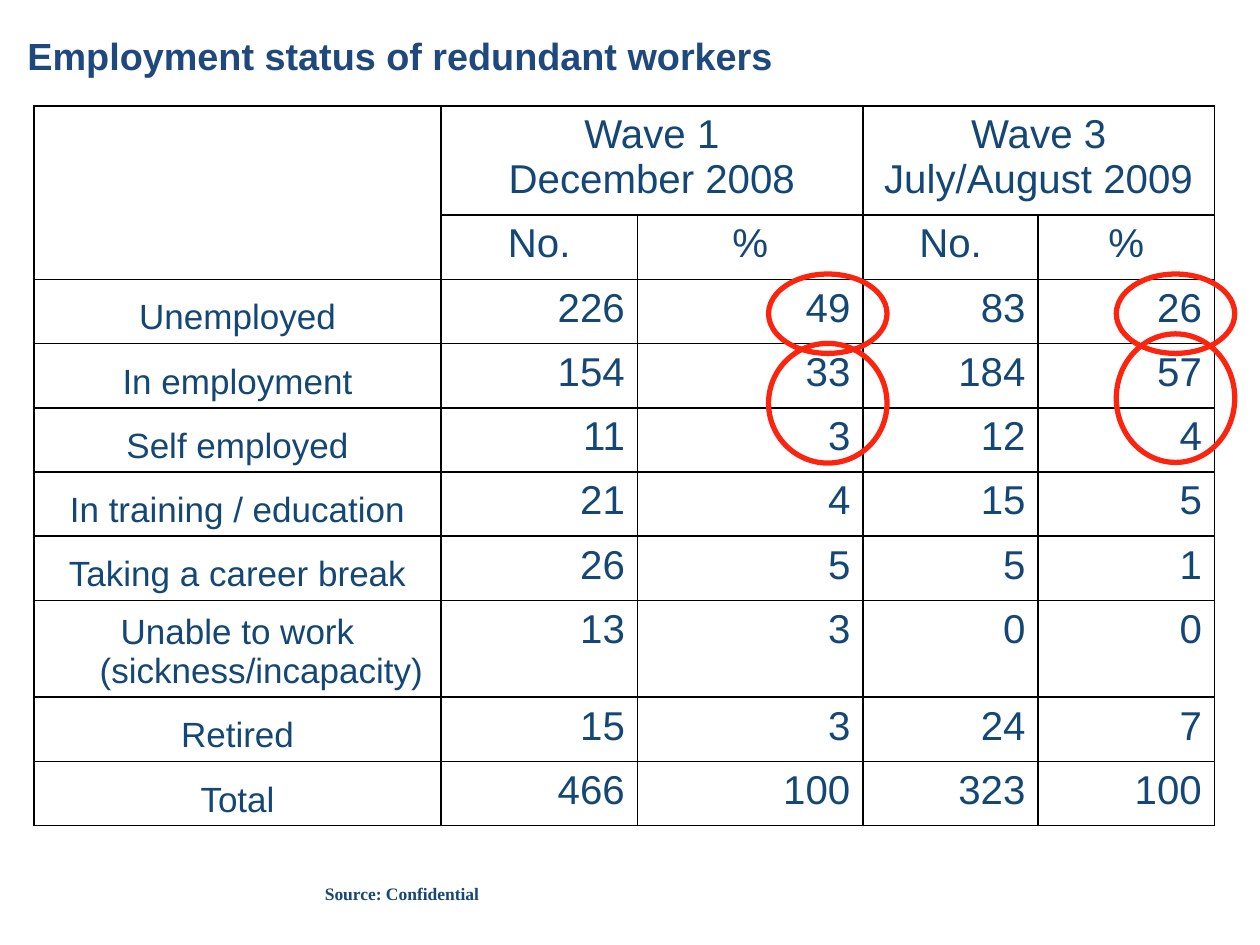
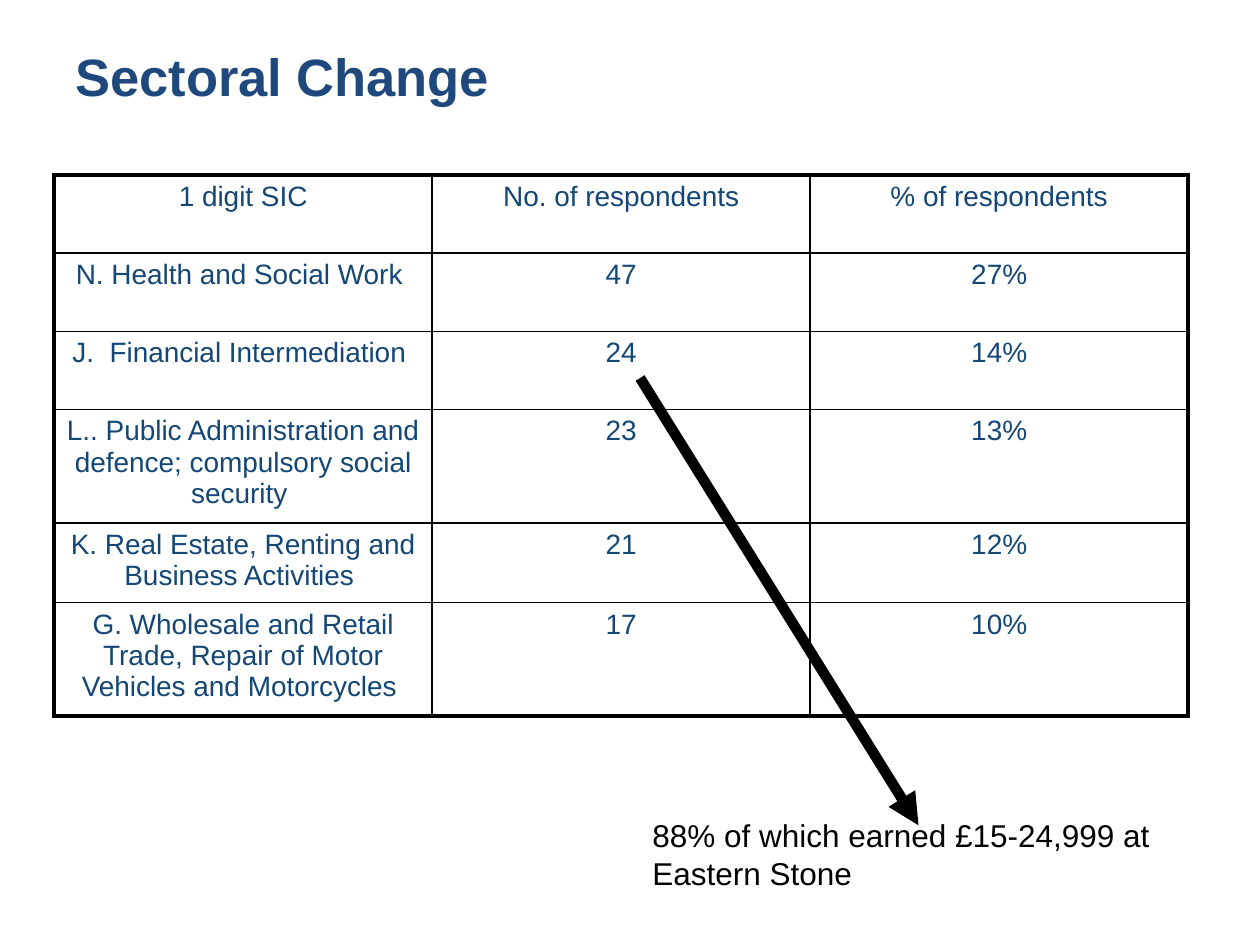
from lxml import etree
from pptx import Presentation
from pptx.dml.color import RGBColor
from pptx.enum import shapes, text
from pptx.oxml import ns
from pptx.util import Inches, Pt

NAVY, TITLE_BLUE, RED, BLACK = "144776", "1F497D", "FB250F", "000000"
LEFT, CENTER, RIGHT = text.PP_ALIGN.LEFT, text.PP_ALIGN.CENTER, text.PP_ALIGN.RIGHT
TOP, MIDDLE, BOTTOM = text.MSO_ANCHOR.TOP, text.MSO_ANCHOR.MIDDLE, text.MSO_ANCHOR.BOTTOM
THIN, THICK = 1, 2.25

STATUS_HEADERS = [
    ["", "Wave 1\nDecember 2008", "", "Wave 3\nJuly/August 2009", ""],
    ["", "No.", "%", "No.", "%"],
]
STATUS_ROWS = [
    ["Unemployed", 226, 49, 83, 26],
    ["In employment", 154, 33, 184, 57],
    ["Self employed", 11, 3, 12, 4],
    ["In training / education", 21, 4, 15, 5],
    ["Taking a career break", 26, 5, 5, 1],
    ["Unable to work (sickness/incapacity)", 13, 3, 0, 0],
    ["Retired", 15, 3, 24, 7],
    ["Total", 466, 100, 323, 100],
]
STATUS_COLUMNS = [3.23, 1.56, 1.79, 1.39, 1.4]
STATUS_HEIGHTS = [0.81] + [0.51] * 9
STATUS_MERGES = [((0, 0), (1, 0)), ((0, 1), (0, 2)), ((0, 3), (0, 4))]
HANGING = 0.38

# centre x, centre y, height of each ring around a percentage
RINGS = [(9.33, 3.16, 1.02), (9.33, 2.49, 0.63), (6.57, 2.49, 0.63), (6.57, 3.2, 0.95)]
RING_WIDTH = 0.94

SECTOR_ROWS = [
    ["1 digit SIC", "No. of respondents", "% of respondents"],
    ["N. Health and Social Work ", "47", "27%"],
    ["J.  Financial Intermediation ", "24", "14%"],
    ["L.. Public Administration and defence; compulsory social security ", "23", "13%"],
    ["K. Real Estate, Renting and Business Activities ", "21", "12%"],
    ["G. Wholesale and Retail Trade, Repair of Motor Vehicles and Motorcycles ", "17", "10%"],
]
EARNINGS_NOTE = "88% of which earned £15-24,999 at Eastern Stone"


def rgb(color):
    return RGBColor.from_string(color)


def style(frame, size, color=NAVY, font="Arial", bold=False, align=LEFT, hanging=0):
    for paragraph in frame.paragraphs:
        paragraph.alignment = align
        if hanging:
            properties = paragraph._p.get_or_add_pPr()
            properties.set("marL", str(Inches(hanging)))
            properties.set("indent", str(-Inches(hanging)))
        for run in paragraph.runs:
            run.font.name, run.font.size, run.font.bold = font, Pt(size), bold
            run.font.color.rgb = rgb(color)


def add_text(slide, words, place, size, anchor=TOP, **look):
    frame = slide.shapes.add_textbox(*map(Inches, place)).text_frame
    frame.word_wrap = True
    frame.vertical_anchor = anchor
    frame.text = words
    style(frame, size, **look)


def add_title(slide, words, place, size):
    add_text(slide, words, place, size, color=TITLE_BLUE, bold=True)


def set_borders(cell, widths):
    """Draw black cell edges; widths are points for left, right, top, bottom."""
    properties = cell._tc.get_or_add_tcPr()
    for side, width in zip("LRTB", widths):
        edge = etree.SubElement(properties, ns.qn(f"a:ln{side}"), w=str(Pt(width)))
        fill = etree.SubElement(edge, ns.qn("a:solidFill"))
        etree.SubElement(fill, ns.qn("a:srgbClr"), val=BLACK)


def add_grid(slide, rows, left, top, columns, heights, outline):
    """Add an unfilled table with thin inner lines and the given outline width."""
    place = map(Inches, (left, top, sum(columns), sum(heights)))
    table = slide.shapes.add_table(len(rows), len(columns), *place).table
    table.first_row = table.horz_banding = False
    for column, width in zip(table.columns, columns):
        column.width = Inches(width)
    for row, height in zip(table.rows, heights):
        row.height = Inches(height)
    for r, row in enumerate(rows):
        for c, value in enumerate(row):
            cell = table.cell(r, c)
            cell.text = str(value)
            on_outline = (c == 0, c == len(columns) - 1, r == 0, r == len(rows) - 1)
            set_borders(cell, [outline if outer else THIN for outer in on_outline])
            cell.fill.background()
    return table


def build_employment_status(slide):
    add_title(slide, "Employment status of redundant workers", (0.12, 0.21, 9, 0.46), 21.6)
    rows = STATUS_HEADERS + STATUS_ROWS
    table = add_grid(slide, rows, 0.27, 0.84, STATUS_COLUMNS, STATUS_HEIGHTS, THIN)
    for r in range(len(rows)):
        for c in range(len(STATUS_COLUMNS)):
            cell = table.cell(r, c)
            is_header, is_label = r < len(STATUS_HEADERS), c == 0
            if is_label and not is_header:
                cell.vertical_anchor = BOTTOM
            style(cell.text_frame, 20 if is_label else 23, hanging=HANGING,
                  align=CENTER if is_header or is_label else RIGHT)
    for first, last in STATUS_MERGES:
        table.cell(*first).merge(table.cell(*last))

    add_text(slide, "Source: Confidential", (2.48, 6.9, 5.67, 0.39), 10, MIDDLE,
             font="Times New Roman", bold=True)
    for x, y, height in RINGS:
        place = (x - RING_WIDTH / 2, y - height / 2, RING_WIDTH, height)
        ring = slide.shapes.add_shape(shapes.MSO_SHAPE.OVAL, *map(Inches, place))
        ring.shadow.inherit = False
        ring.fill.background()
        ring.line.color.rgb = rgb(RED)
        ring.line.width = Pt(3)


def build_sectoral_change(slide):
    add_title(slide, "Sectoral Change", (0.5, 0.3, 9, 1.25), 30)
    table = add_grid(slide, SECTOR_ROWS, 0.43, 1.39, [3] * 3, [0.62] * 6, THICK)
    for cell in table.iter_cells():
        style(cell.text_frame, 16, align=CENTER)

    arrow = slide.shapes.add_connector(
        shapes.MSO_CONNECTOR.STRAIGHT, *map(Inches, (5.08, 3, 7.29, 6.55)))
    arrow.line.color.rgb = rgb(BLACK)
    arrow.line.width = Pt(6)
    properties = arrow._element.spPr
    etree.SubElement(properties.find(ns.qn("a:ln")), ns.qn("a:tailEnd"), type="triangle")
    etree.SubElement(properties, ns.qn("a:effectLst"))
    add_text(slide, EARNINGS_NOTE, (5.08, 6.43, 4.33, 0.7), 18, color=BLACK)


def main():
    deck = Presentation()
    deck.slide_width, deck.slide_height = Inches(10), Inches(7.5)
    for build in (build_employment_status, build_sectoral_change):
        build(deck.slides.add_slide(deck.slide_layouts[6]))
    deck.save("out.pptx")


if __name__ == "__main__":
    main()
